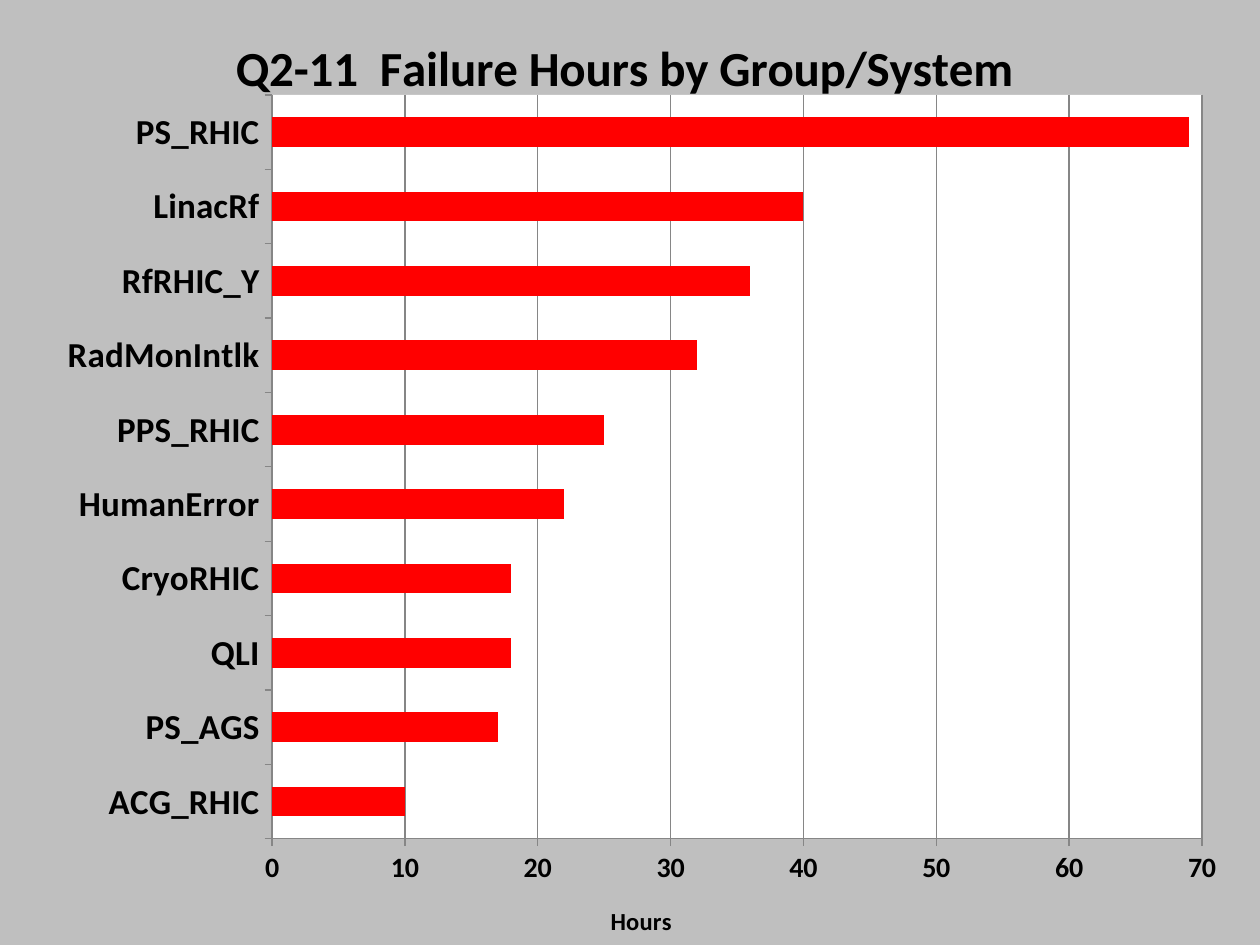
"""Build a slide with a bar chart of failure hours by group and system."""
from pptx import Presentation
from pptx.chart.data import CategoryChartData
from pptx.dml.color import RGBColor
from pptx.enum.chart import XL_CHART_TYPE, XL_TICK_MARK
from pptx.oxml import parse_xml
from pptx.oxml.ns import nsdecls, qn
from pptx.util import Pt

EMU_PER_PX = 914400 / 126
WIDTH_PX, HEIGHT_PX = 1260, 945
WIDTH, HEIGHT = (round(px * EMU_PER_PX) for px in (WIDTH_PX, HEIGHT_PX))
COLORS = {"backdrop": "BFBFBF", "plot": "FFFFFF", "bars": "FF0000",
          "lines": "868686", "text": "000000"}
FAILURE_HOURS = {
    "ACG_RHIC": 10, "PS_AGS": 17, "QLI": 18, "CryoRHIC": 18, "HumanError": 22,
    "PPS_RHIC": 25, "RadMonIntlk": 32, "RfRHIC_Y": 36, "LinacRf": 40, "PS_RHIC": 69,
}


def set_layout(parent, position, target="", **lengths):
    for old_layout in parent.findall(qn("c:layout")):
        parent.remove(old_layout)
    whole = {"x": WIDTH_PX, "y": HEIGHT_PX, "w": WIDTH_PX, "h": HEIGHT_PX}
    entries = "".join(f'<c:{key} val="{px / whole[key]:.4f}"/>' for key, px in lengths.items())
    parent.insert(position, parse_xml(
        f'<c:layout {nsdecls("c")}><c:manualLayout>{target}<c:xMode val="edge"/>'
        f'<c:yMode val="edge"/>{entries}</c:manualLayout></c:layout>'))


def area_fill(color):
    return parse_xml(
        f'<c:spPr {nsdecls("c", "a")}><a:solidFill><a:srgbClr val="{color}"/></a:solidFill>'
        '<a:ln><a:noFill/></a:ln></c:spPr>')


presentation = Presentation()
presentation.slide_width, presentation.slide_height = WIDTH, HEIGHT
slide = presentation.slides.add_slide(presentation.slide_layouts[6])

hours_data = CategoryChartData(number_format="0")
hours_data.categories = list(FAILURE_HOURS)
hours_data.add_series("Series 1", list(FAILURE_HOURS.values()))
chart = slide.shapes.add_chart(
    XL_CHART_TYPE.BAR_CLUSTERED, 0, 0, WIDTH, HEIGHT, hours_data).chart
chart.has_legend = False

groups, hours = chart.category_axis, chart.value_axis
hours.maximum_scale, hours.major_unit = 70, 10
hours.has_major_gridlines = True
hours.tick_labels.number_format = "0"
hours.tick_labels.number_format_is_linked = False

heading = chart.chart_title.text_frame.paragraphs[0].add_run()
heading.text = "Q2-11  Failure Hours by Group/System "
hours_caption = hours.axis_title.text_frame.paragraphs[0].add_run()
hours_caption.text = "Hours"

text_formats = [
    (chart.font, {"size": Pt(10)}),
    (heading.font, {"size": Pt(28), "bold": True}),
    (hours_caption.font, {"size": Pt(14), "bold": True}),
    (groups.tick_labels.font, {"size": Pt(20), "bold": True}),
    (hours.tick_labels.font, {"size": Pt(16), "bold": True}),
]
for font, values in text_formats:
    for attribute, value in {"name": "Calibri", **values}.items():
        setattr(font, attribute, value)
    font.color.rgb = RGBColor.from_string(COLORS["text"])

for axis in (groups, hours):
    axis.major_tick_mark = XL_TICK_MARK.OUTSIDE
    axis.minor_tick_mark = XL_TICK_MARK.NONE
for line in (groups.format.line, hours.format.line, hours.major_gridlines.format.line):
    line.color.rgb = RGBColor.from_string(COLORS["lines"])
    line.width = Pt(0.75)

bars = chart.plots[0]
bars.gap_width = 150
bars.vary_by_categories = False
bars.series[0].format.fill.solid()
bars.series[0].format.fill.fore_color.rgb = RGBColor.from_string(COLORS["bars"])

chart_part = chart._chartSpace.find(qn("c:chart"))
plot_area = chart_part.find(qn("c:plotArea"))
chart_part.addnext(area_fill(COLORS["backdrop"]))
plot_area.append(area_fill(COLORS["plot"]))
set_layout(plot_area, 0, '<c:layoutTarget val="inner"/>', x=272, y=95, w=930, h=744)
set_layout(chart.chart_title._element, 1, x=227, y=26)
set_layout(hours.axis_title._element, 1, x=606, y=900)

presentation.save("out.pptx")
